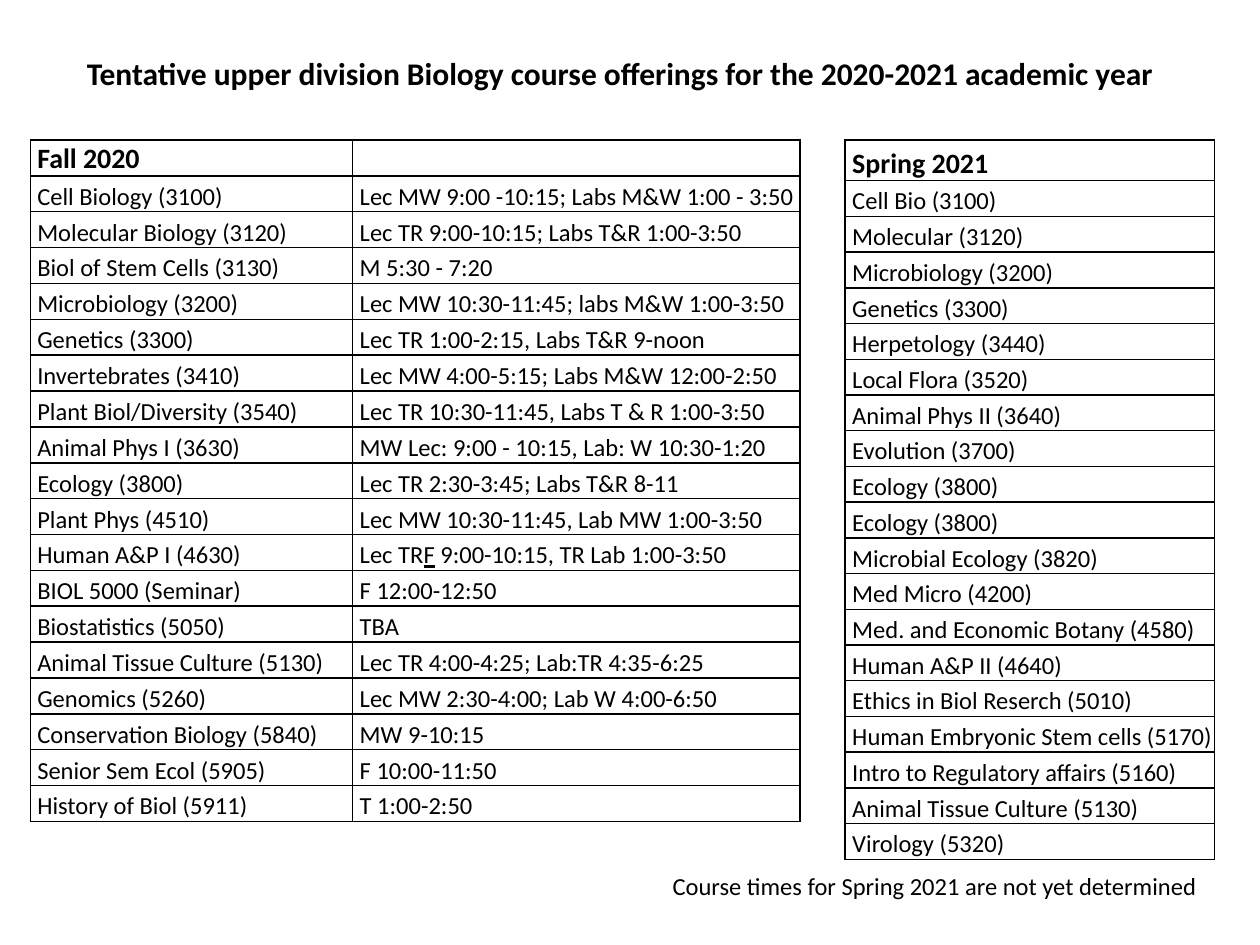
from dataclasses import dataclass
from typing import NamedTuple

from lxml import etree
from pptx import Presentation
from pptx.dml.color import RGBColor
from pptx.enum.text import MSO_ANCHOR, MSO_AUTO_SIZE
from pptx.oxml.ns import qn
from pptx.util import Pt

ANCHOR_BOTTOM = MSO_ANCHOR.BOTTOM
GROW_TO_TEXT = MSO_AUTO_SIZE.SHAPE_TO_FIT_TEXT
BLANK_LAYOUT = 6


@dataclass(frozen=True)
class Theme:
    font: str = "Calibri"
    ink: str = "000000"
    title_size: float = 18
    header_size: float = 16
    body_size: float = 14
    border_width: float = 1
    cell_indent: float = 4
    cell_margin: float = 0.7


class Run(NamedTuple):
    text: str
    underline: bool = False


Cell = str | tuple[Run, ...]


class CourseTable(NamedTuple):
    left: float
    top: float
    column_widths: tuple[float, ...]
    header_height: float
    row_height: float
    rows: list[tuple[Cell, ...]]


class Caption(NamedTuple):
    text: str
    left: float
    top: float
    width: float
    height: float
    size: float
    bold: bool = False


THEME = Theme()

FALL = CourseTable(17.3, 80, (184.3, 255.7), 20.5, 20.5, [
    ("Fall 2020", ""),
    ("Cell Biology (3100)", "Lec MW 9:00 -10:15; Labs M&W 1:00 - 3:50"),
    ("Molecular Biology (3120)", "Lec TR 9:00-10:15; Labs T&R 1:00-3:50"),
    ("Biol of Stem Cells (3130)", "M 5:30 - 7:20"),
    ("Microbiology (3200)", "Lec MW 10:30-11:45; labs M&W 1:00-3:50"),
    ("Genetics (3300)", "Lec TR 1:00-2:15, Labs T&R 9-noon"),
    ("Invertebrates (3410)", "Lec MW 4:00-5:15; Labs M&W 12:00-2:50"),
    ("Plant Biol/Diversity (3540)", "Lec TR 10:30-11:45, Labs T & R 1:00-3:50"),
    ("Animal Phys I (3630)", "MW Lec: 9:00 - 10:15, Lab: W 10:30-1:20"),
    ("Ecology (3800)", "Lec TR 2:30-3:45; Labs T&R 8-11"),
    ("Plant Phys (4510)", "Lec MW 10:30-11:45, Lab MW 1:00-3:50"),
    ("Human A&P I (4630)",
     (Run("Lec TR"), Run("F", underline=True), Run(" 9:00-10:15, TR Lab 1:00-3:50"))),
    ("BIOL 5000 (Seminar)", "F 12:00-12:50"),
    ("Biostatistics (5050)", "TBA"),
    ("Animal Tissue Culture (5130)", "Lec TR 4:00-4:25; Lab:TR 4:35-6:25"),
    ("Genomics (5260)", "Lec MW 2:30-4:00; Lab W 4:00-6:50"),
    ("Conservation Biology (5840)", "MW 9-10:15"),
    ("Senior Sem Ecol (5905)", "F 10:00-11:50"),
    ("History of Biol (5911)", "T 1:00-2:50"),
])

SPRING_COURSES = [
    "Spring 2021", "Cell Bio (3100)", "Molecular (3120)", "Microbiology (3200)",
    "Genetics (3300)", "Herpetology (3440)", "Local Flora (3520)",
    "Animal Phys II (3640)", "Evolution (3700)", "Ecology (3800)", "Ecology (3800)",
    "Microbial Ecology (3820)", "Med Micro (4200)", "Med. and Economic Botany (4580)",
    "Human A&P II (4640)", "Ethics in Biol Reserch (5010)",
    "Human Embryonic Stem cells (5170)", "Intro to Regulatory affairs (5160)",
    "Animal Tissue Culture (5130)", "Virology (5320)",
]
SPRING = CourseTable(483, 80, (211,), 23.3, 20.42, [(course,) for course in SPRING_COURSES])

CAPTIONS = [
    Caption("Tentative upper division Biology course offerings for the 2020-2021 academic year",
            42.5, 27.5, 625.7, 29, THEME.title_size, bold=True),
    Caption("Course times for Spring 2021 are not yet determined",
            377.3, 494, 316.8, 24.3, THEME.body_size),
]


def add_run(paragraph, content: Run, size: float, bold: bool) -> None:
    run = paragraph.add_run()
    run.text = content.text
    font = run.font
    font.name = THEME.font
    font.size = Pt(size)
    font.bold = bold
    font.color.rgb = RGBColor.from_string(THEME.ink)
    if content.underline:
        font.underline = True


def add_cell_borders(cell) -> None:
    """Put the four border lines ahead of the fill, as the schema demands."""
    properties = cell._tc.get_or_add_tcPr()
    for position, side in enumerate(("a:lnL", "a:lnR", "a:lnT", "a:lnB")):
        line = etree.Element(qn(side), w=str(Pt(THEME.border_width)))
        fill = etree.SubElement(line, qn("a:solidFill"))
        etree.SubElement(fill, qn("a:srgbClr"), val=THEME.ink)
        properties.insert(position, line)


def fill_cell(cell, content: Cell, size: float, bold: bool) -> None:
    cell.margin_left = Pt(THEME.cell_indent)
    cell.margin_right = cell.margin_top = Pt(THEME.cell_margin)
    cell.margin_bottom = 0
    cell.vertical_anchor = ANCHOR_BOTTOM
    cell.fill.background()
    add_cell_borders(cell)
    paragraph = cell.text_frame.paragraphs[0]
    if not content:
        # An empty cell keeps the header size, so that it does not stretch its row.
        etree.SubElement(paragraph._p, qn("a:endParaRPr"), sz=str(int(size * 100)))
        return
    runs = (Run(content),) if isinstance(content, str) else content
    for run in runs:
        add_run(paragraph, run, size, bold)


def add_course_table(slide, courses: CourseTable) -> None:
    row_count = len(courses.rows)
    height = courses.header_height + courses.row_height * (row_count - 1)
    shape = slide.shapes.add_table(
        row_count, len(courses.column_widths), Pt(courses.left), Pt(courses.top),
        Pt(sum(courses.column_widths)), Pt(height))
    table = shape.table
    table.first_row = False
    table.horz_banding = False
    for column, width in zip(table.columns, courses.column_widths):
        column.width = Pt(width)
    for index, (row, contents) in enumerate(zip(table.rows, courses.rows)):
        is_header = index == 0
        row.height = Pt(courses.header_height if is_header else courses.row_height)
        size = THEME.header_size if is_header else THEME.body_size
        for cell, content in zip(row.cells, contents):
            fill_cell(cell, content, size, is_header)


def add_caption(slide, caption: Caption) -> None:
    shape = slide.shapes.add_textbox(
        Pt(caption.left), Pt(caption.top), Pt(caption.width), Pt(caption.height))
    frame = shape.text_frame
    frame.word_wrap = False
    frame.auto_size = GROW_TO_TEXT
    add_run(frame.paragraphs[0], Run(caption.text), caption.size, caption.bold)


def main() -> None:
    presentation = Presentation()
    presentation.slide_width = Pt(720)
    presentation.slide_height = Pt(540)
    slide = presentation.slides.add_slide(presentation.slide_layouts[BLANK_LAYOUT])
    for courses in (FALL, SPRING):
        add_course_table(slide, courses)
    for caption in CAPTIONS:
        add_caption(slide, caption)
    presentation.save("out.pptx")


if __name__ == "__main__":
    main()
